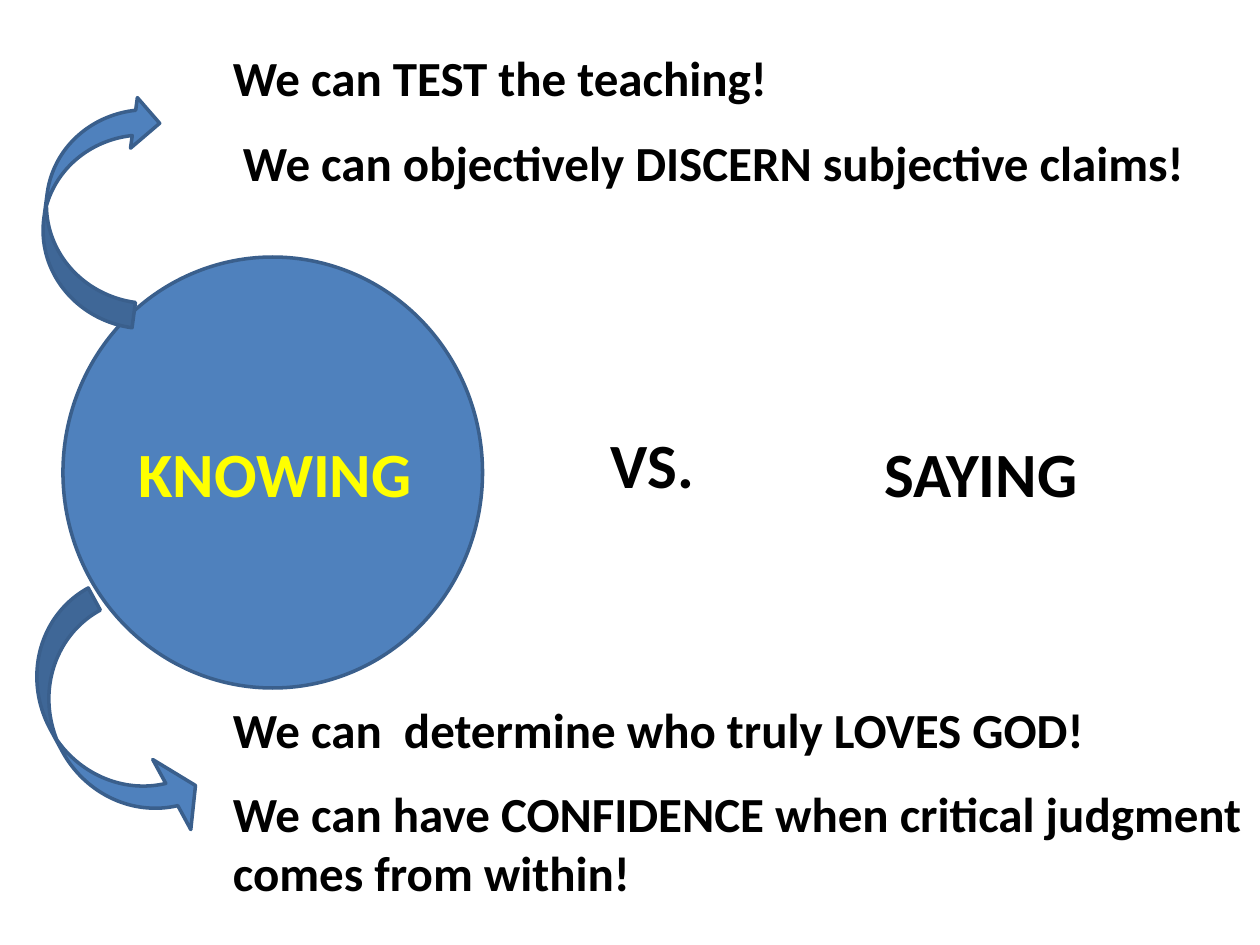
from pptx import Presentation
from pptx.dml.color import RGBColor
from pptx.enum.shapes import MSO_SHAPE
from pptx.enum.text import MSO_AUTO_SIZE
from pptx.util import Inches, Pt

OVAL = MSO_SHAPE.OVAL
CURVED_UP = MSO_SHAPE.CURVED_UP_ARROW
CURVED_DOWN = MSO_SHAPE.CURVED_DOWN_ARROW
FIT_SHAPE = MSO_AUTO_SIZE.SHAPE_TO_FIT_TEXT

BLUE = RGBColor(0x4F, 0x81, 0xBD)
DARK_BLUE = RGBColor(0x3A, 0x5F, 0x8C)
YELLOW = RGBColor(0xFF, 0xFF, 0x00)
BLACK = RGBColor(0x00, 0x00, 0x00)

FONT = "Calibri"
TERM_SIZE, CLAIM_SIZE = 36, 28
TERM_HEIGHT = 0.71
CLAIM_PITCH = 0.67  # from one claim to the next in a group

# text, left, top, width, colour
TERMS = [
    ("KNOWING", 1, 3.4, 2.42, YELLOW),
    ("VS.", 4.75, 3.33, 0.92, BLACK),
    ("SAYING", 6.92, 3.4, 2, BLACK),
]

# top of the group, then its claims: text, left, width, height
CLAIM_GROUPS = [
    (0.33, [
        ("We can TEST the teaching!", 1.75, 4.5, 0.57),
        ("We can objectively DISCERN subjective claims!", 1.83, 8.83, 0.57),
    ]),
    (5.5, [
        ("We can  determine who truly LOVES GOD!", 1.75, 7.25, 0.57),
        ("We can have CONFIDENCE when critical judgment comes from within!",
         1.75, 9, 1.04),
    ]),
]

CIRCLE = (0.5, 2.04, 3.33, 3.42)
LOWER_ARROW = (-0.2, 5.38, 2.1, 0.8)
UPPER_ARROW = (-0.15, 1.23, 1.84, 0.81)


def add_blue_shape(slide, preset, box, rotation=0, adjustments=()):
    shape = slide.shapes.add_shape(preset, *map(Inches, box))
    shape.shadow.inherit = False
    shape.fill.solid()
    shape.fill.fore_color.rgb = BLUE
    shape.line.color.rgb = DARK_BLUE
    shape.line.width = Pt(2)
    shape.rotation = rotation
    for index, value in enumerate(adjustments):
        shape.adjustments[index] = value


def add_text(slide, text, box, size, color=BLACK):
    frame = slide.shapes.add_textbox(*map(Inches, box)).text_frame
    frame.word_wrap = True
    frame.auto_size = FIT_SHAPE
    paragraph = frame.paragraphs[0]
    run = paragraph.add_run()
    run.text = text
    run.font.name = FONT
    run.font.size = Pt(size)
    run.font.bold = True
    run.font.color.rgb = color


def main():
    presentation = Presentation()
    presentation.slide_width = Inches(10)
    presentation.slide_height = Inches(7.5)
    slide = presentation.slides.add_slide(presentation.slide_layouts[6])

    add_blue_shape(slide, OVAL, CIRCLE)
    for text, left, top, width, color in TERMS:
        add_text(slide, text, (left, top, width, TERM_HEIGHT), TERM_SIZE, color=color)
    for group_top, claims in CLAIM_GROUPS:
        for row, (text, left, width, height) in enumerate(claims):
            top = group_top + row * CLAIM_PITCH
            add_text(slide, text, (left, top, width, height), CLAIM_SIZE)
    add_blue_shape(slide, CURVED_UP, LOWER_ARROW, rotation=61.5,
                   adjustments=(0.25, 0.79, 0.25))
    add_blue_shape(slide, CURVED_DOWN, UPPER_ARROW, rotation=277.7)

    presentation.save("out.pptx")


if __name__ == "__main__":
    main()
